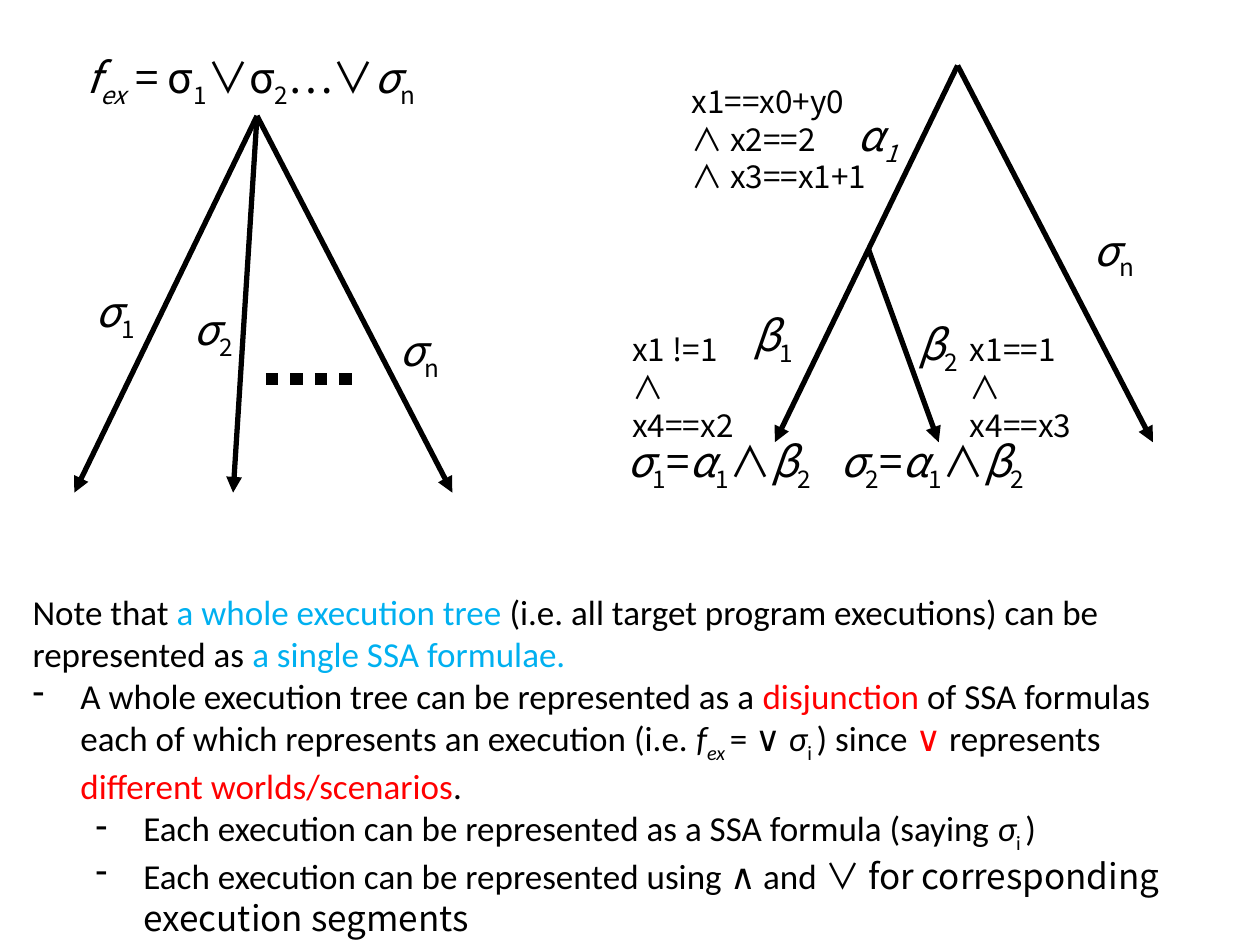
from pptx import Presentation
from pptx.dml.color import RGBColor
from pptx.enum.dml import MSO_LINE
from pptx.enum.shapes import MSO_CONNECTOR
from pptx.enum.text import MSO_ANCHOR, MSO_AUTO_SIZE
from pptx.oxml.ns import qn
from pptx.util import Inches, Pt
from lxml import etree

STRAIGHT = MSO_CONNECTOR.STRAIGHT
DOTTED = MSO_LINE.ROUND_DOT
TOP = MSO_ANCHOR.TOP
GROW, FIXED = MSO_AUTO_SIZE.SHAPE_TO_FIT_TEXT, MSO_AUTO_SIZE.NONE
BLACK = RGBColor(0x00, 0x00, 0x00)
RED = RGBColor(0xFF, 0x00, 0x00)
BLUE = RGBColor(0x00, 0xB0, 0xF0)
MATH, BODY = "Noto Sans CJK KR", "Calibri"

# The grid has 10 columns and 7.5 rows, one inch each
COLS, ROWS = 10, 7.5
DROP = 2.99
LEFT, RIGHT = -1.45, 1.55


def add_tag(parent, tag, **attrs):
    return etree.SubElement(parent, qn(tag), attrs)


def add_run(para, words, marks="", size=24, font=MATH):
    """Marks: i italic, s subscript, r red, b blue, m math font."""
    run = para.add_run()
    run.text = words
    face = run.font
    face.size = Pt(size)
    face.italic = "i" in marks
    face.color.rgb = RED if "r" in marks else BLUE if "b" in marks else BLACK
    face.name = MATH if "m" in marks else font
    props = run._r.get_or_add_rPr()
    if face.name == MATH:
        add_tag(props, "a:ea", typeface=MATH)
    if "s" in marks:
        props.set("baseline", "-25000")


def set_list(para, level):
    """Hang a dash in front of the paragraph."""
    para.level = level
    props = para._p.get_or_add_pPr()
    props.set("marL", str(Inches(0.38 + 0.5 * level)))
    props.set("indent", str(Inches(-0.38)))
    add_tag(props, "a:buChar", char="-")


def add_text(slide, box, paras, size=24, font=MATH, before=0, levels=None,
             tab=None, fit=FIXED):
    """Each paragraph is a list of (words, marks) pairs."""
    frame = slide.shapes.add_textbox(*map(Inches, box)).text_frame
    frame.word_wrap = True
    frame.auto_size = fit
    frame.vertical_anchor = TOP
    for i, runs in enumerate(paras):
        para = frame.paragraphs[0] if i == 0 else frame.add_paragraph()
        para.space_before = Pt(before)
        if levels and levels[i] is not None:
            set_list(para, levels[i])
        if tab:
            stops = add_tag(para._p.get_or_add_pPr(), "a:tabLst")
            add_tag(stops, "a:tab", pos=str(Inches(tab)), algn="l")
        for run in runs:
            add_run(para, *run, size=size, font=font)


def add_math(slide, x, y, width, runs, tab=None):
    add_text(slide, (x, y, width, 0.4), [runs], before=4.8, tab=tab)


def add_line(slide, start, end, width=3, dash=None, arrow=True):
    line = slide.shapes.add_connector(STRAIGHT, *map(Inches, start + end))
    line.line.color.rgb = BLACK
    line.line.width = Pt(width)
    if dash:
        line.line.dash_style = dash
    if arrow:
        add_tag(line.line._get_or_add_ln(), "a:tailEnd", type="triangle")
    add_tag(line._element.spPr, "a:effectLst")


def add_fan(slide, x, y, shifts):
    """Arrows from one root down to leaves on the same row."""
    for shift in shifts:
        add_line(slide, (x, y), (x + shift, y + DROP))


def add_code(slide, x, y, width, height, lines):
    add_text(slide, (x, y, width, height), [[(line,)] for line in lines],
             size=18, fit=GROW)


def pair(sign, index, marks="s"):
    return [(sign, "i"), (index, marks)]


def add_trees(slide):
    # Arrows of both trees, and the dots between the left paths
    add_fan(slide, 2.04, 0.92, (LEFT, -0.19, RIGHT))
    add_fan(slide, 7.6, 0.52, (LEFT, RIGHT))
    add_line(slide, (6.89, 1.97), (7.45, 3.51))
    add_line(slide, (2.11, 3.01), (2.81, 3.01), 7, DOTTED, False)

    # Path names
    for x, y, sign, index, marks in (
            (0.66, 2.22, "σ", "1", "s"), (1.44, 2.36, "σ", "2", "s"),
            (3.07, 2.53, "σ", "n", "s"), (8.58, 1.73, "σ", "n", "s"),
            (6.71, 0.82, "α", "1", "si"), (5.88, 2.41, "β", "1", "s"),
            (7.19, 2.48, "β", "2", "s")):
        add_math(slide, x, y, 0.67, pair(sign, index, marks))

    # Formulas above the left tree and below the right one
    add_math(slide, 0.59, 0.36, 3.15, [
        ("f", "i"), ("ex", "si"), (" = σ",), ("1", "s"), ("∨σ",), ("2", "s"),
        ("…∨",), *pair("σ", "n")])
    tail = [("=",), *pair("α", "1"), ("∧",), *pair("β", "2")]
    add_math(slide, 4.88, 3.41, 4.33, [
        *pair("σ", "1"), *tail, ("\t",), *pair("σ", "2"), *tail], tab=1.69)

    # Conditions along the right tree
    add_code(slide, 5.39, 0.6, 1.69, 1.01,
             ("x1==x0+y0", "∧ x2==2", "∧ x3==x1+1"))
    add_code(slide, 4.92, 2.57, 1.3, 0.71, ("x1 !=1", "∧ x4==x2"))
    add_code(slide, 7.6, 2.57, 1.3, 0.71, ("x1==1", "∧ x4==x3"))


def add_notes(slide):
    add_text(slide, (0.16, 4.64, 9.48, 3.13), [
        [("Note that ",), ("a whole execution tree ", "b"),
         ("(i.e. all target program executions) can be represented as ",),
         ("a single SSA formulae.", "b")],
        [("A whole execution tree can be represented as a ",),
         ("disjunction", "r"),
         (" of SSA formulas each of which represents an execution (i.e. ",),
         ("f", "i"), ("ex ", "si"), ("= ∨ ",), *pair("σ", "i "),
         (") since ",), ("∨", "r"), (" represents ",),
         ("different worlds/scenarios", "r"), (".",)],
        [("Each execution can be represented as a SSA formula (saying ",),
         *pair("σ", "i "), (")",)],
        [("Each execution can be represented using ∧ and ",),
         ("∨ for corresponding execution segments", "m")],
    ], size=20, font=BODY, levels=(None, 0, 1, 1), fit=GROW)


def main():
    deck = Presentation()
    deck.slide_width, deck.slide_height = Inches(COLS), Inches(ROWS)
    slide = deck.slides.add_slide(deck.slide_layouts[6])
    add_trees(slide)
    add_notes(slide)
    deck.save("out.pptx")


if __name__ == "__main__":
    main()
